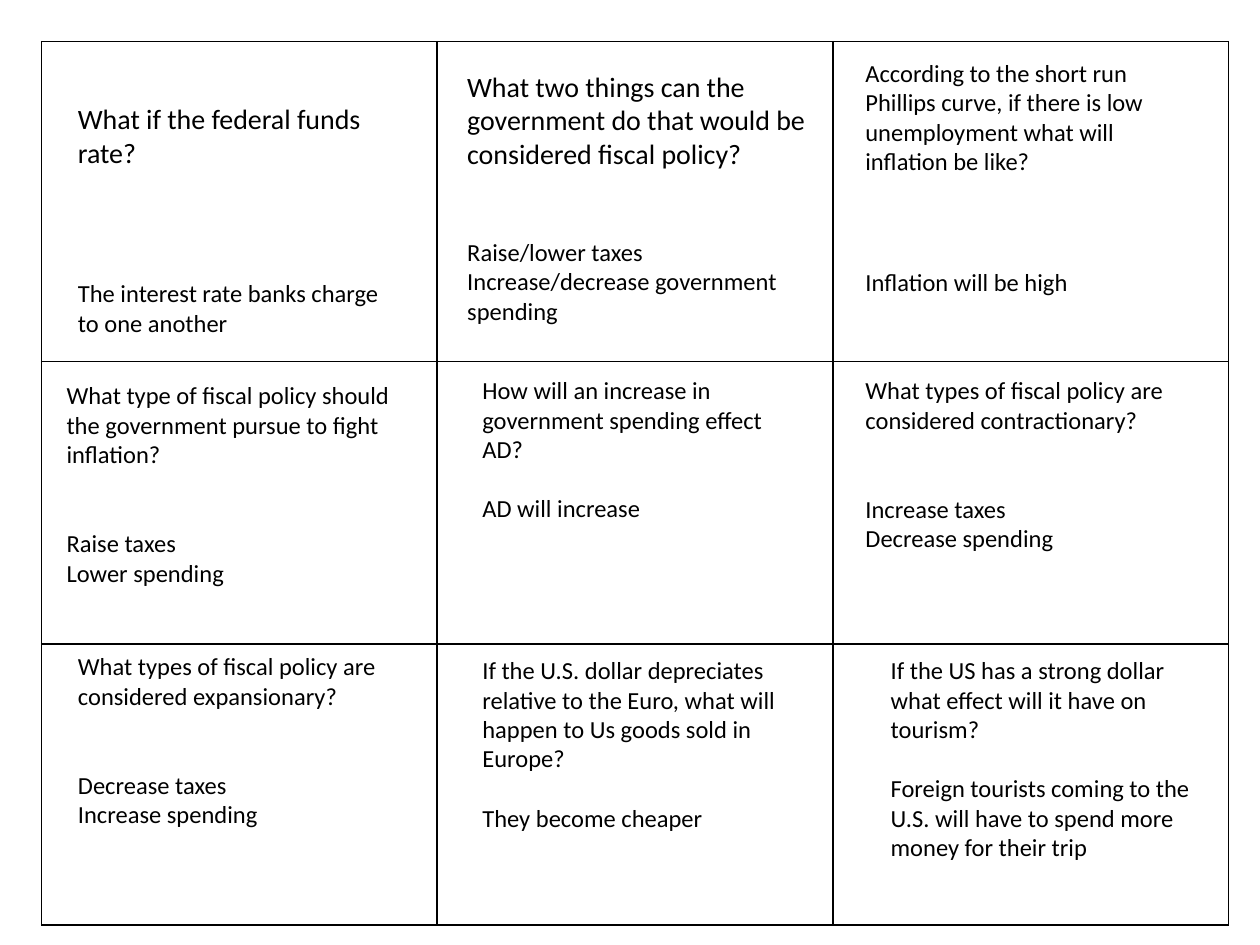
"""Build a three-by-three grid of economics review cards."""
from dataclasses import dataclass

from lxml import etree
from pptx import Presentation
from pptx.dml.color import RGBColor
from pptx.enum import text
from pptx.oxml import ns
from pptx.util import Inches, Pt


@dataclass(frozen=True)
class Theme:
    """Colours and type sizes of the slide."""
    ink: str = "000000"
    font: str = "Calibri"
    large: int = 16
    regular: int = 14
    line: int = 17
    border: int = 1


@dataclass(frozen=True)
class Note:
    """A text box holding a question, its answers, or both."""
    left: float
    top: float
    width: float
    height: float
    lines: tuple[str, ...]
    gap: int = 0
    size: int = Theme.regular


COLUMNS = (3.14, 3.14, 3.14)
ROWS = (2.54, 2.24, 2.23)

NOTES = (
    Note(0.52, 0.76, 2.89, 0.64, ("What if the federal funds rate?",), size=Theme.large),
    Note(0.52, 2.16, 2.71, 0.57, ("The interest rate banks charge to one another",)),
    Note(3.61, 0.5, 3, 0.91,
         ("What two things can the government do that would be considered fiscal policy?",),
         size=Theme.large),
    Note(3.61, 1.83, 2.71, 0.81,
         ("Raise/lower taxes", "Increase/decrease government spending")),
    Note(6.77, 0.41, 2.7, 1.04,
         ("According to the short run Phillips curve, if there is low unemployment "
          "what will inflation be like?",)),
    Note(6.77, 2.07, 2.71, 0.34, ("Inflation will be high",)),
    Note(0.43, 2.97, 2.9, 1.75,
         ("What type of fiscal policy should the government pursue to fight inflation?",
          "Raise taxes", "Lower spending"), gap=2),
    Note(3.73, 2.93, 2.58, 1.28,
         ("How will an increase in government spending effect AD?", "AD will increase"), gap=1),
    Note(6.77, 2.93, 2.58, 1.51,
         ("What types of fiscal policy are considered contractionary?",
          "Increase taxes", "Decrease spending"), gap=2),
    Note(0.52, 5.12, 2.58, 1.51,
         ("What types of fiscal policy are considered expansionary?",
          "Decrease taxes", "Increase spending"), gap=2),
    Note(3.73, 5.15, 2.58, 1.51,
         ("If the U.S. dollar depreciates relative to the Euro, what will happen to "
          "Us goods sold in Europe?", "They become cheaper"), gap=1),
    Note(6.97, 5.15, 2.58, 1.75,
         ("If the US has a strong dollar what effect will it have on tourism?",
          "Foreign tourists coming to the U.S. will have to spend more money for their trip"),
         gap=1),
)


def outline_cell(cell, theme: Theme) -> None:
    """Clear the fill of a cell and rule its four sides."""
    properties = cell._tc.get_or_add_tcPr()
    for side in ("a:lnL", "a:lnR", "a:lnT", "a:lnB"):
        line = etree.SubElement(properties, ns.qn(side), w=str(Pt(theme.border)))
        fill = etree.SubElement(line, ns.qn("a:solidFill"))
        etree.SubElement(fill, ns.qn("a:srgbClr"), val=theme.ink)
    cell.fill.background()


def add_grid(page, theme: Theme) -> None:
    """Add the empty ruled table behind the cards."""
    frame = page.shapes.add_table(len(ROWS), len(COLUMNS), Inches(0.33), Inches(0.33),
                                  Inches(sum(COLUMNS)), Inches(sum(ROWS)))
    table = frame.table
    table.first_row = table.horz_banding = False
    for column, width in zip(table.columns, COLUMNS):
        column.width = Inches(width)
    for row, height in zip(table.rows, ROWS):
        row.height = Inches(height)
    for cell in table.iter_cells():
        outline_cell(cell, theme)


def add_note(page, note: Note, theme: Theme) -> None:
    """Add one text box, with its gap measured in lines after the question."""
    box = page.shapes.add_textbox(Inches(note.left), Inches(note.top),
                                  Inches(note.width), Inches(note.height))
    frame = box.text_frame
    frame.word_wrap = True
    frame.auto_size = text.MSO_AUTO_SIZE.SHAPE_TO_FIT_TEXT
    frame.text = "\n".join(note.lines)
    for para in frame.paragraphs:
        for span in para.runs:
            span.font.name = theme.font
            span.font.size = Pt(note.size)
            span.font.color.rgb = RGBColor.from_string(theme.ink)
    if note.gap:
        frame.paragraphs[0].space_after = Pt(note.gap * theme.line)


def main() -> None:
    """Build and save the deck."""
    theme = Theme()
    deck = Presentation()
    deck.slide_width, deck.slide_height = Inches(10), Inches(7.5)
    page = deck.slides.add_slide(deck.slide_layouts.get_by_name("Blank"))
    add_grid(page, theme)
    for note in NOTES:
        add_note(page, note, theme)
    deck.save("out.pptx")


if __name__ == "__main__":
    main()
